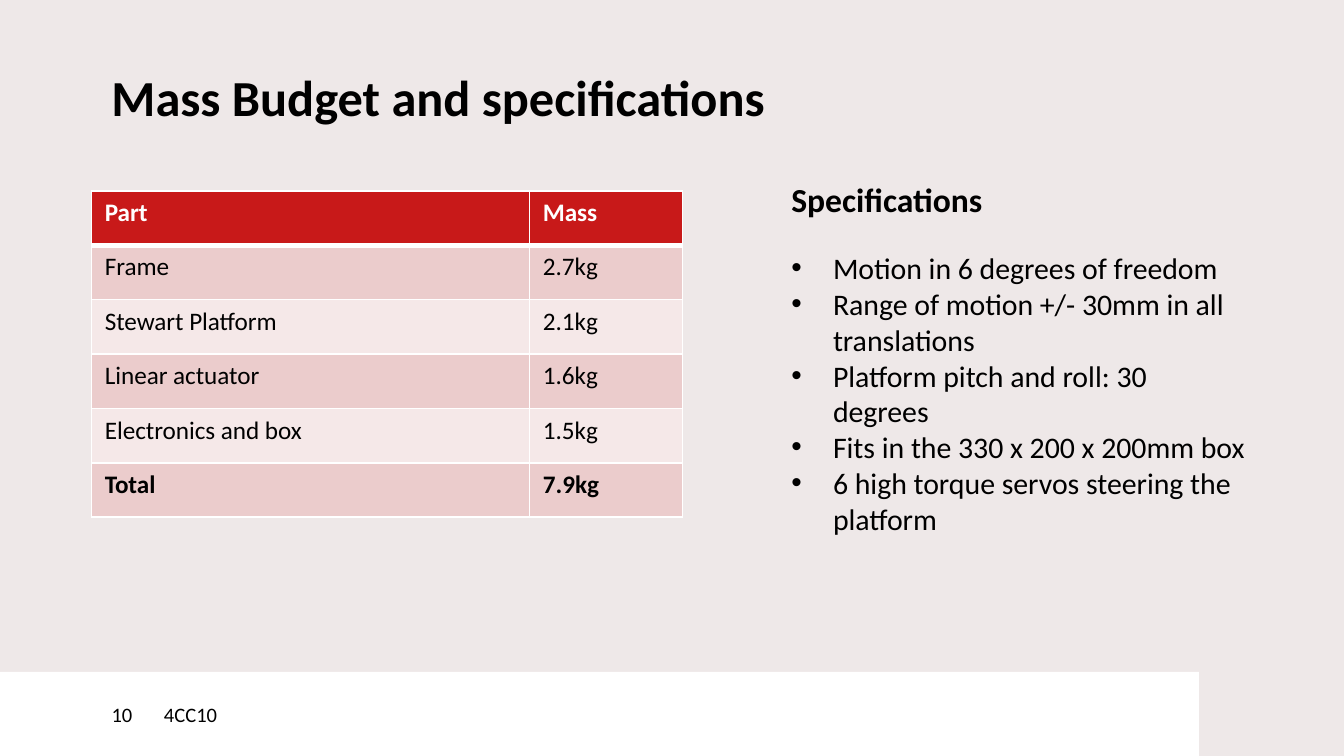
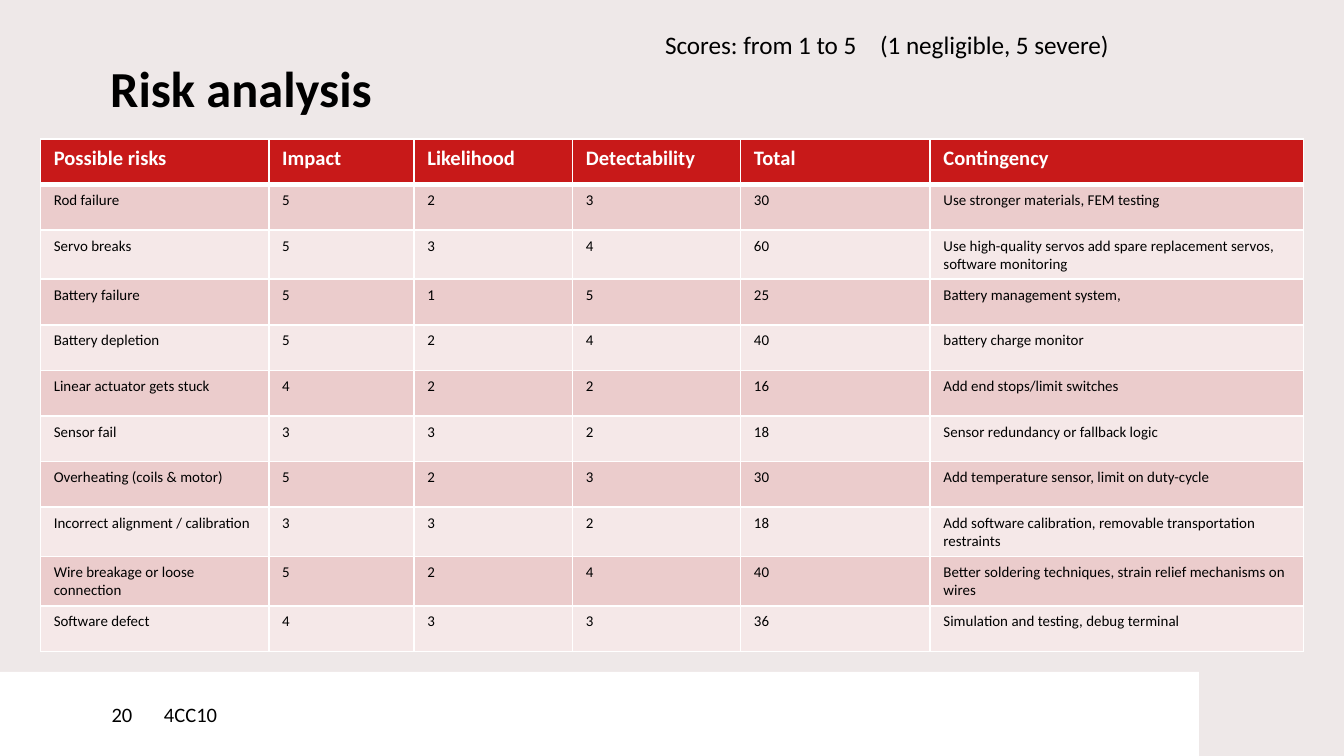
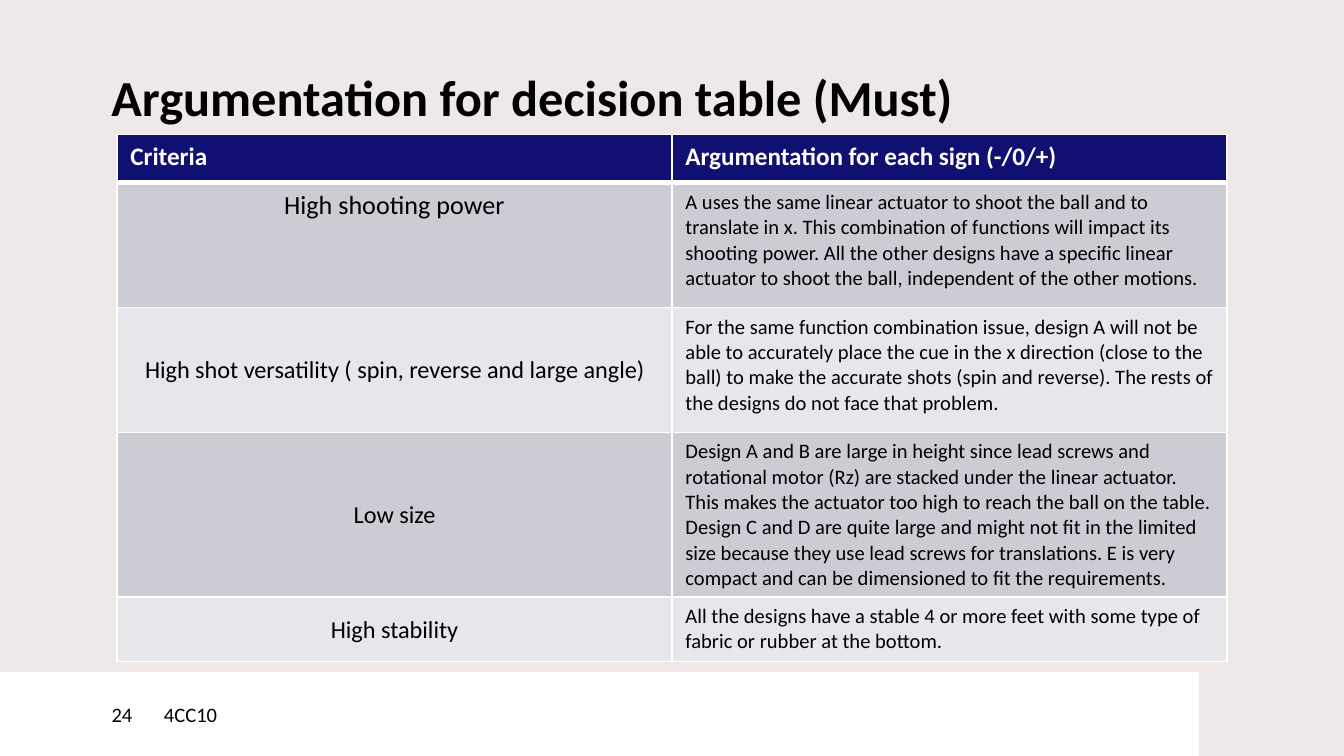
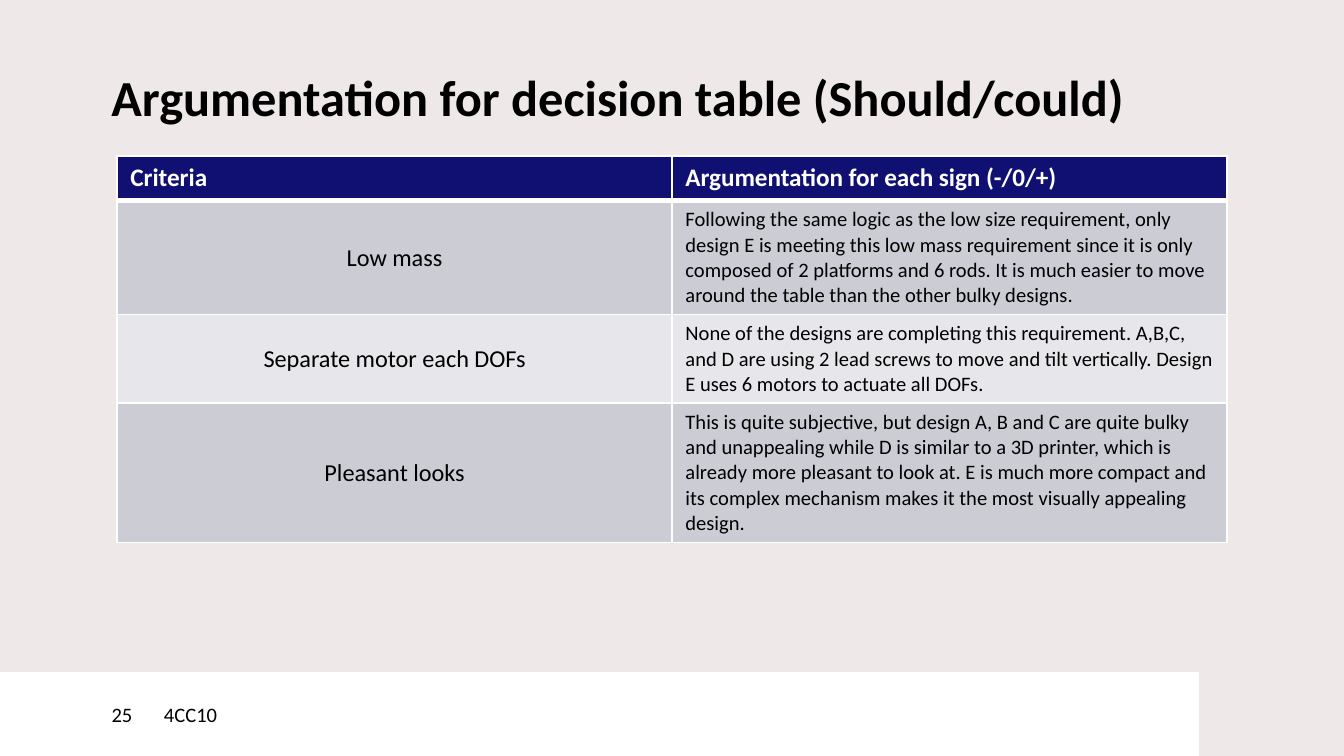
"""Build four project slides: mass budget, risks and two decision tables."""
from dataclasses import dataclass, field
from typing import Any, NamedTuple

from lxml import etree
from pptx import Presentation
from pptx import util as u
from pptx.dml.color import RGBColor
from pptx.enum import shapes, text
from pptx.oxml import ns

WIDE = u.Inches(10)
HIGH = u.Inches(5.625)
FONT = "Calibri"
BLACK = RGBColor(0x00, 0x00, 0x00)
WHITE = RGBColor(0xFF, 0xFF, 0xFF)
PAPER = RGBColor(0xEE, 0xE8, 0xE8)
RED = RGBColor(0xC8, 0x19, 0x19)
ROSE = RGBColor(0xEB, 0xCC, 0xCC)
BLUSH = RGBColor(0xF5, 0xE8, 0xE8)
NAVY = RGBColor(0x10, 0x10, 0x73)
STEEL = RGBColor(0xCC, 0xCC, 0xD5)
MIST = RGBColor(0xE7, 0xE7, 0xEB)
THIN, THICK = u.Pt(0.96), u.Pt(3)
MID = text.MSO_ANCHOR.MIDDLE
TOP = text.MSO_ANCHOR.TOP
CENTER = text.PP_ALIGN.CENTER


class Box(NamedTuple):
    """Place as percent of the slide's width and height."""
    left: float
    top: float
    wide: float
    high: float

    def emu(self) -> tuple[int, int, int, int]:
        """Return the place in slide units."""
        return (across(self.left), down(self.top),
                across(self.wide), down(self.high))


class Look(NamedTuple):
    """Style of a piece of text."""
    size: float
    bold: bool = False
    color: RGBColor = BLACK
    align: Any = None
    anchor: Any = TOP
    pads: tuple[float, float, float, float] = (0.1, 0.05, 0.1, 0.05)


class Hue(NamedTuple):
    """Fills of a table: header, then alternating rows."""
    head: RGBColor
    odd: RGBColor
    even: RGBColor


@dataclass
class Grid:
    """Table with column and row sizes in percent of the slide."""
    left: float
    top: float
    cols: list[float]
    rows: list[float]
    hue: Hue
    data: list[tuple[str, ...]]
    head: Look
    body: Look
    lead: Look | None = None
    spot: dict[tuple[int, int], Look] = field(default_factory=dict)

    def look(self, row: int, col: int) -> Look:
        """Choose the style of one cell."""
        if row == 0:
            return self.head
        base = self.lead if self.lead and col == 0 else self.body
        return self.spot.get((row, col), base)


FLAT = (0, 0, 0, 0)
TITLE = Look(27, True, pads=FLAT)
FOOT = Look(11, anchor=MID, pads=FLAT)
PAGE = FOOT._replace(pads=(0.83, 0, 0, 0))
HEAD = Look(13.5, True, WHITE)
NOTE = Look(13.5)
LEAD = Look(13, align=CENTER, anchor=MID, pads=(0.01, 0.01, 0.01, 0))
WARM = Hue(RED, ROSE, BLUSH)
COOL = Hue(NAVY, STEEL, MIST)
TITLE_AT = Box(8.3, 10.13, 82.6, 10.49)

MASS = [
    ("Part", "Mass"),
    ("Frame", "2.7kg"),
    ("Stewart Platform", "2.1kg"),
    ("Linear actuator", "1.6kg"),
    ("Electronics and box", "1.5kg"),
    ("Total", "7.9kg"),
]
SPECS = [
    "Motion in 6 degrees of freedom",
    "Range of motion +/- 30mm in all translations",
    "Platform pitch and roll: 30 degrees",
    "Fits in the 330 x 200 x 200mm box",
    "6 high torque servos steering the platform",
]
RISKS = [
    ("Possible risks", "Impact", "Likelihood", "Detectability", "Total",
     "Contingency"),
    ("Rod failure", "5", "2", "3", "30", "Use stronger materials, FEM testing"),
    ("Servo breaks", "5", "3", "4", "60",
     "Use high-quality servos add spare replacement servos, "
     "software monitoring"),
    ("Battery failure", "5", "1", "5", "25", "Battery management system,"),
    ("Battery depletion", "5", "2", "4", "40", "battery charge monitor"),
    ("Linear actuator gets stuck", "4", "2", "2", "16",
     "Add end stops/limit switches"),
    ("Sensor fail", "3", "3", "2", "18", "Sensor redundancy or fallback logic"),
    ("Overheating (coils & motor)", "5", "2", "3", "30",
     "Add temperature sensor, limit on duty-cycle"),
    ("Incorrect alignment / calibration", "3", "3", "2", "18",
     "Add software calibration, removable transportation restraints"),
    ("Wire breakage or loose connection", "5", "2", "4", "40",
     "Better soldering techniques, strain relief mechanisms on wires"),
    ("Software defect", "4", "3", "3", "36",
     "Simulation and testing, debug terminal"),
]
SIGNS = ("Criteria", "Argumentation for each sign (-/0/+)")
MUST = [
    SIGNS,
    ("High shooting power",
     "A uses the same linear actuator to shoot the ball and to translate in "
     "x. This combination of functions will impact its shooting power. All "
     "the other designs have a specific linear actuator to shoot the ball, "
     "independent of the other motions."),
    ("High shot versatility ( spin, reverse and large angle)",
     "For the same function combination issue, design A will not be able to "
     "accurately place the cue in the x direction (close to the ball) to "
     "make the accurate shots (spin and reverse). The rests of the designs "
     "do not face that problem."),
    ("Low size",
     "Design A and B are large in height since lead screws and rotational "
     "motor (Rz) are stacked under the linear actuator. This makes the "
     "actuator too high to reach the ball on the table. Design C and D are "
     "quite large and might not fit in the limited size because they use "
     "lead screws for translations. E is very compact and can be "
     "dimensioned to fit the requirements."),
    ("High stability",
     "All the designs have a stable 4 or more feet with some type of fabric "
     "or rubber at the bottom."),
]
SHOULD = [
    SIGNS,
    ("Low mass",
     "Following the same logic as the low size requirement, only design E "
     "is meeting this low mass requirement since it is only composed of 2 "
     "platforms and 6 rods. It is much easier to move around the table than "
     "the other bulky designs."),
    ("Separate motor each DOFs",
     "None of the designs are completing this requirement. A,B,C, and D are "
     "using 2 lead screws to move and tilt vertically. Design E uses 6 "
     "motors to actuate all DOFs."),
    ("Pleasant looks",
     "This is quite subjective, but design A, B and C are quite bulky and "
     "unappealing while D is similar to a 3D printer, which is already more "
     "pleasant to look at. E is much more compact and its complex mechanism "
     "makes it the most visually appealing design."),
]


def across(share: float) -> int:
    """Turn a percent of the width into a length."""
    return u.Emu(round(WIDE * share / 100))


def down(share: float) -> int:
    """Turn a percent of the height into a length."""
    return u.Emu(round(HIGH * share / 100))


def apply(item: Any, vals: dict[str, Any]) -> None:
    """Set each named attribute."""
    for key, val in vals.items():
        setattr(item, key, val)


def paint(item: Any, color: RGBColor) -> None:
    """Give an object a solid fill."""
    item.fill.solid()
    item.fill.fore_color.rgb = color


def node(root: Any, tag: str, **vals: Any) -> Any:
    """Append a drawing element with its attributes."""
    return etree.SubElement(root, ns.qn(f"a:{tag}"),
                            {key: str(val) for key, val in vals.items()})


def write(para: Any, words: str, look: Look) -> None:
    """Write one styled run."""
    run = para.add_run()
    run.text = words
    apply(run.font, {"name": FONT, "size": u.Pt(look.size), "bold": look.bold})
    run.font.color.rgb = look.color
    para.alignment = look.align


def margins(pads: tuple[float, ...]) -> dict[str, int]:
    """Name the four insets."""
    sides = ("left", "top", "right", "bottom")
    return {f"margin_{side}": u.Inches(pad) for side, pad in zip(sides, pads)}


def frame(item: Any, look: Look) -> Any:
    """Prepare the text frame of a shape and return its first paragraph."""
    body = item.text_frame
    apply(body, {"word_wrap": True, "vertical_anchor": look.anchor,
                 **margins(look.pads)})
    return body.paragraphs[0]


def label(slide: Any, box: Box, words: str, look: Look) -> Any:
    """Add a text box and return its paragraph."""
    para = frame(slide.shapes.add_textbox(*box.emu()), look)
    write(para, words, look)
    return para


def band(slide: Any, box: Box, words: str, look: Look) -> None:
    """Add one white footer part."""
    part = slide.shapes.add_shape(shapes.MSO_SHAPE.RECTANGLE, *box.emu())
    part.shadow.inherit = False
    paint(part, WHITE)
    part.line.fill.background()
    para = frame(part, look)
    write(para, words, look._replace(align=text.PP_ALIGN.LEFT))


def start(deck: Any, title: str, page: int, box: Box = TITLE_AT) -> Any:
    """Add a slide with its background, title and footer."""
    slide = deck.slides.add_slide(deck.slide_layouts[6])
    paint(slide.background, PAPER)
    label(slide, box, title, TITLE).line_spacing = u.Pt(27)
    band(slide, Box(12.2, 88.89, 77, 11.11), "4CC10", FOOT)
    band(slide, Box(0, 88.89, 12.2, 11.11), str(page), PAGE)
    return slide


def edge(cell: Any, row: int) -> None:
    """Draw white borders, thick between header and body."""
    props = cell._tc.get_or_add_tcPr()
    sides = {"lnL": THIN, "lnR": THIN,
             "lnT": THICK if row == 1 else THIN,
             "lnB": THICK if row == 0 else THIN}
    for spot, (tag, width) in enumerate(sides.items()):
        line = node(props, tag, w=int(width))
        node(node(line, "solidFill"), "srgbClr", val=WHITE)
        props.insert(spot, line)


def table(slide: Any, grid: Grid) -> None:
    """Draw a table."""
    box = Box(grid.left, grid.top, sum(grid.cols), sum(grid.rows))
    tab = slide.shapes.add_table(len(grid.rows), len(grid.cols),
                                 *box.emu()).table
    apply(tab, {"first_row": False, "horz_banding": False})
    for col, share in zip(tab.columns, grid.cols):
        col.width = across(share)
    for row, share in zip(tab.rows, grid.rows):
        row.height = down(share)
    for r, line in enumerate(grid.data):
        tint = grid.hue.head if r == 0 else grid.hue[2 - r % 2]
        for c, words in enumerate(line):
            cell, look = tab.cell(r, c), grid.look(r, c)
            paint(cell, tint)
            edge(cell, r)
            apply(cell, {"vertical_anchor": look.anchor,
                         **margins(look.pads)})
            write(cell.text_frame.paragraphs[0], words, look)


def specs(slide: Any) -> None:
    """Add the heading and bulleted specifications."""
    box = slide.shapes.add_textbox(*Box(57.9, 22.76, 36, 61.69).emu())
    first = frame(box, Look(18))
    write(first, "Specifications", Look(18, True))
    first.space_after = u.Pt(16.5)
    dent = u.Inches(0.31)
    for words in SPECS:
        para = box.text_frame.add_paragraph()
        props = para._p.get_or_add_pPr()
        props.set("marL", str(dent))
        props.set("indent", str(-dent))
        node(node(props, "buClr"), "srgbClr", val=BLACK)
        node(props, "buFont", typeface="Arial")
        node(props, "buChar", char="•")
        write(para, words, Look(16))


def scale(slide: Any) -> None:
    """Add the scoring note with its tab stop."""
    para = label(slide, Box(48.5, 3.02, 43.2, 5.87),
                 "Scores: from 1 to 5\t(1 negligible, 5 severe)", NOTE)
    stops = node(para._p.get_or_add_pPr(), "tabLst")
    node(stops, "tab", pos=int(u.Inches(1.6)), algn="l")


def main() -> None:
    """Build and save the deck."""
    deck = Presentation()
    apply(deck, {"slide_width": WIDE, "slide_height": HIGH})

    slide = start(deck, "Mass Budget and specifications", 10)
    total = NOTE._replace(bold=True)
    table(slide, Grid(6.8, 25.24, [32.6, 11.4], [7.2] * 6, WARM, MASS,
                      HEAD, NOTE, spot={(5, c): total for c in range(2)}))
    specs(slide)

    slide = start(deck, "Risk analysis", 20,
                  TITLE_AT._replace(left=8.2, top=8.89))
    table(slide, Grid(3, 18.35, [17, 10.8, 11.8, 12.5, 14.1, 27.8],
                      [6.04] * 11, WARM, RISKS, HEAD._replace(size=11),
                      Look(8)))
    scale(slide)

    halves = [41.3] * 2
    slide = start(deck, "Argumentation for decision table (Must)", 24)
    table(slide, Grid(8.7, 17.8, halves, [6.4, 16.5, 16.5, 21.8, 8.5],
                      COOL, MUST, HEAD, Look(11), LEAD,
                      {(1, 0): Look(14, align=CENTER)}))

    slide = start(deck, "Argumentation for decision table (Should/could)", 25)
    table(slide, Grid(8.7, 20.6, halves, [5.9, 15.1, 11.7, 18.5],
                      COOL, SHOULD, HEAD, Look(11), LEAD))

    deck.save("out.pptx")


if __name__ == "__main__":
    main()
